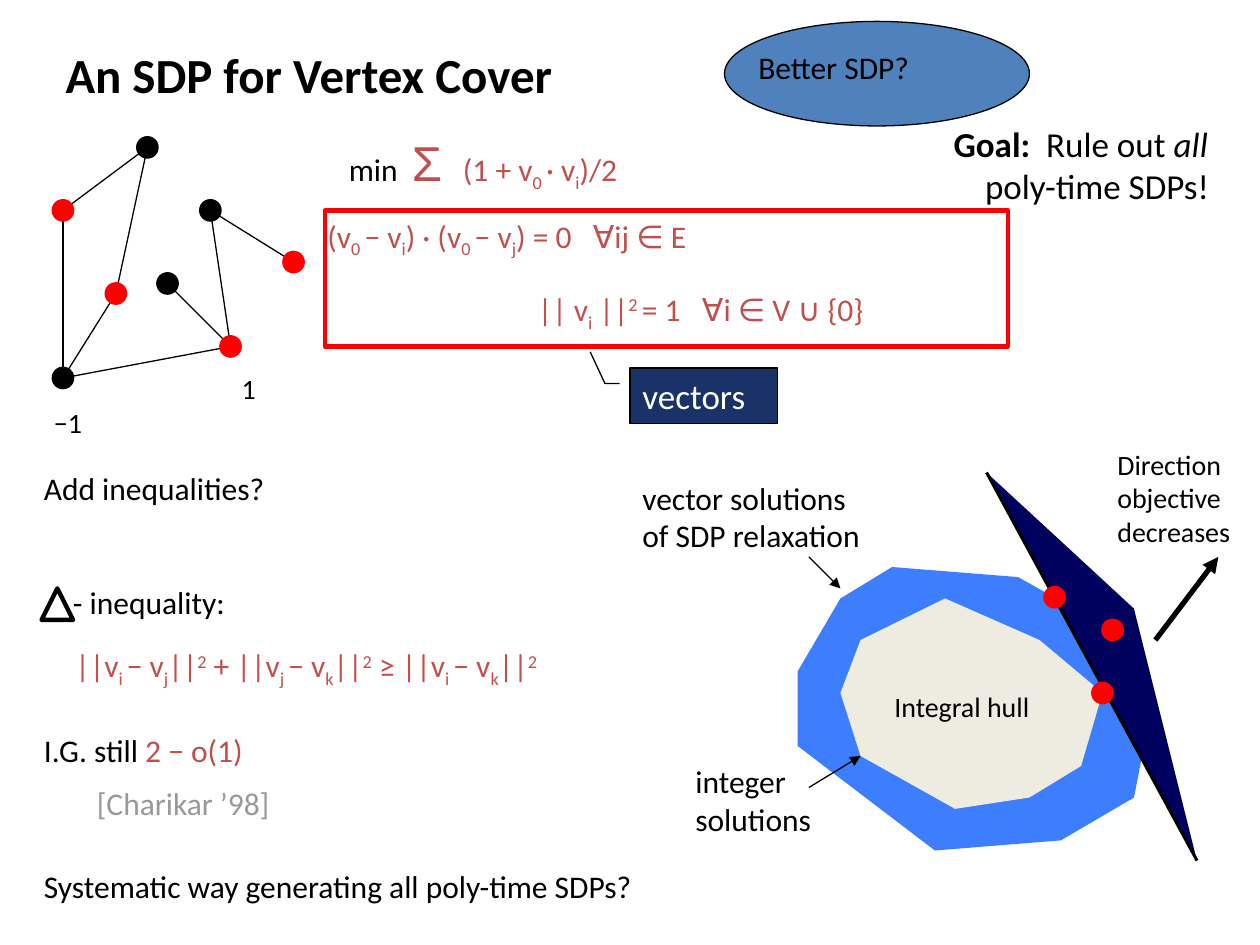
from dataclasses import dataclass, field
from typing import NamedTuple

from lxml.etree import SubElement
from pptx import Presentation
from pptx.dml.color import RGBColor
from pptx.enum.shapes import MSO_CONNECTOR, MSO_SHAPE
from pptx.enum.text import MSO_ANCHOR, PP_ALIGN
from pptx.oxml.ns import qn
from pptx.util import Inches, Pt

COLORS = {
    "black": "000000", "white": "FFFFFF", "red": "FF0000", "formula": "C0504D",
    "grey": "999999", "bubble": "4F81BD", "relaxation": "3D7EFF",
    "half_plane": "00005E", "hull": "EEECE1", "callout": "193369",
}
DOT_SIZE = 0.17


class Piece(NamedTuple):
    text: str
    formats: dict = {}
    color: str = ""
    baseline: int = 0


class Point(NamedTuple):
    x: float
    y: float


class Vertex(NamedTuple):
    center: Point
    color: str


class Arrow(NamedTuple):
    start: Point
    end: Point
    width: float


class Polygon(NamedTuple):
    color: str
    points: list


@dataclass
class Label:
    left: float
    top: float
    width: float
    height: float
    lines: list
    size: int = 18
    color: str = "black"
    indents: dict = field(default_factory=dict)


def sub(text: str) -> Piece:
    return Piece(text, baseline=-25000)


def sup(text: str) -> Piece:
    return Piece(text, baseline=30000)


def rgb(name: str) -> RGBColor:
    return RGBColor.from_string(COLORS[name])


def fill_text(frame, lines: list, size: int, color: str) -> None:
    for index, line in enumerate(lines):
        paragraph = frame.paragraphs[0] if index == 0 else frame.add_paragraph()
        paragraph.alignment = PP_ALIGN.LEFT
        for item in [line] if isinstance(line, str) else line:
            piece = Piece(item) if isinstance(item, str) else item
            run = paragraph.add_run()
            run.text = piece.text
            formats = {"name": "Calibri", "size": Pt(size), **piece.formats}
            for name, value in formats.items():
                setattr(run.font, name, value)
            run.font.color.rgb = rgb(piece.color or color)
            if piece.baseline:
                run.font._element.set("baseline", str(piece.baseline))


def add_label(shapes, label: Label) -> None:
    box = [Inches(v) for v in (label.left, label.top, label.width, label.height)]
    frame = shapes.add_textbox(*box).text_frame
    frame.word_wrap = True
    fill_text(frame, label.lines, label.size, label.color)
    for index, indent in label.indents.items():
        properties = frame.paragraphs[index]._p.get_or_add_pPr()
        properties.set("marL", str(Inches(indent)))


def add_preset(shapes, kind, box: tuple, fill: str = "", line: str = "black",
               width: float = 0.75):
    shape = shapes.add_shape(kind, *[Inches(value) for value in box])
    shape.shadow.inherit = False
    if fill:
        shape.fill.solid()
        shape.fill.fore_color.rgb = rgb(fill)
    else:
        shape.fill.background()
    shape.line.color.rgb = rgb(line)
    shape.line.width = Pt(width)
    return shape


def add_dot(shapes, center: Point, color: str) -> None:
    box = (center.x - DOT_SIZE / 2, center.y - DOT_SIZE / 2, DOT_SIZE, DOT_SIZE)
    add_preset(shapes, MSO_SHAPE.OVAL, box, color, color)


def add_line(shapes, start: Point, end: Point, width: float = 0.75,
             arrow: bool = False) -> None:
    ends = [Inches(value) for value in (*start, *end)]
    connector = shapes.add_connector(MSO_CONNECTOR.STRAIGHT, *ends)
    connector.line.color.rgb = rgb("black")
    connector.line.width = Pt(width)
    if arrow:
        SubElement(connector.line._get_or_add_ln(), qn("a:tailEnd"), type="triangle")
    SubElement(connector._element.spPr, qn("a:effectLst"))


def add_polygon(shapes, polygon: Polygon) -> None:
    points = [(Inches(x), Inches(y)) for x, y in polygon.points]
    builder = shapes.build_freeform(*points[0])
    builder.add_line_segments(points[1:], close=True)
    shape = builder.convert_to_shape()
    shape.shadow.inherit = False
    shape.fill.solid()
    shape.fill.fore_color.rgb = rgb(polygon.color)
    shape.line.fill.background()


POLYGONS = [
    Polygon("relaxation", [(6.67, 4.75), (6.33, 5.33), (6.33, 5.92), (7.42, 6.75),
                           (8.42, 6.67), (9, 6.33), (9.08, 5.92), (8.83, 5),
                           (8.08, 4.58), (7.08, 4.5)]),
    Polygon("half_plane", [(7.83, 3.75), (9.5, 6.83), (9, 4.83)]),
    Polygon("hull", [(7.5, 4.75), (6.83, 5.08), (6.67, 5.5), (6.83, 6), (7.58, 6.42),
                     (8.17, 6.33), (8.58, 6.08), (8.75, 5.5), (8.25, 5.08)]),
]
VERTICES = {
    "top": Vertex(Point(1.17, 1.17), "black"),
    "left": Vertex(Point(0.5, 1.67), "red"),
    "middle": Vertex(Point(0.92, 2.33), "red"),
    "bottom": Vertex(Point(0.5, 3), "black"),
    "inner": Vertex(Point(1.33, 2.25), "black"),
    "upper": Vertex(Point(1.67, 1.67), "black"),
    "hub": Vertex(Point(1.83, 2.75), "red"),
    "right": Vertex(Point(2.33, 2.08), "red"),
}
EDGES = [("left", "bottom"), ("bottom", "hub"), ("hub", "upper"), ("bottom", "middle"),
         ("middle", "top"), ("top", "left"), ("right", "upper"), ("hub", "inner")]
ARROWS = [
    Arrow(Point(6.42, 4.42), Point(6.67, 4.67), 0.75),
    Arrow(Point(6.42, 6.25), Point(6.83, 6), 0.75),
    Arrow(Point(9.17, 5.08), Point(9.67, 4.42), 3),
]
SOLUTION_DOTS = [Point(8.83, 5), Point(8.75, 5.5), Point(8.37, 4.74)]
LABELS = [
    Label(4.17, 2.25, 3.83, 0.5, [["|| v", sub("i"), " ||", sup("2 "),
                                   "= 1   ∀i ∈ V ∪ {0}"]], color="formula"),
    Label(2.5, 1.67, 4.58, 0.5, [["(v", sub("0 "), "− v", sub("i"), ") · (v", sub("0 "),
                                  "− v", sub("j"), ") = 0   ∀ij ∈ E"]], color="formula"),
    Label(2.67, 1, 3.13, 0.57, [[
        Piece("min  ", color="black"), Piece("Σ ", {"name": "Arial", "size": Pt(28)}),
        " (1 + v", sub("0 "), "· v", sub("i"), ")/2"]], color="formula"),
    Label(0.5, 5.08, 5.17, 0.5, [[
        "||v", sub("i "), "− v", sub("j"), "||", sup("2"), " + ||v", sub("j "), "− v",
        sub("k"), "||", sup("2"), " ≥ ||v", sub("i "), "− v", sub("k"), "||", sup("2")]],
        color="formula"),
    Label(1.82, 2.9, 0.32, 0.37, ["1"], 16),
    Label(0.33, 3.17, 0.45, 0.37, ["−1"], 16),
    Label(5.92, 0.33, 2.05, 0.5, ["Better SDP?"]),
    Label(0.25, 4.58, 2.28, 0.5, ["- inequality:"], indents={0: 0.23}),
    Label(7, 5.42, 1.35, 0.37, ["Integral hull"], 16),
    Label(0.25, 5.75, 2.58, 0.5, [["I.G. still ", Piece("2 − o(1)", color="formula")]]),
    Label(0.67, 6.17, 1.69, 0.4, ["[Charikar ’98]"], color="grey"),
    Label(0.25, 6.83, 7.19, 0.5, ["Systematic way generating all poly-time SDPs?"]),
    Label(5.42, 6, 1.19, 0.7, ["integer", "solutions"]),
    Label(5, 3.75, 2.15, 0.7, ["vector solutions", "of SDP relaxation"]),
    Label(8.77, 3.5, 1.23, 0.9, ["Direction", "objective", "decreases"], 16),
    Label(0.25, 3.67, 2.74, 0.5, ["Add inequalities?"]),
    Label(7.47, 0.92, 2.53, 0.77, [
        [Piece("Goal:", {"bold": True}), "  Rule out ", Piece("all", {"italic": True})],
        "poly-time SDPs!"], 20, indents={1: 0.25}),
]


def main() -> None:
    presentation = Presentation()
    presentation.slide_width, presentation.slide_height = Inches(10), Inches(7.5)
    slide = presentation.slides.add_slide(presentation.slide_layouts[5])
    shapes = slide.shapes

    title = shapes.title
    for name, value in {"left": 0.42, "top": 0.17, "width": 9.33, "height": 0.83}.items():
        setattr(title, name, Inches(value))
    title.text_frame.vertical_anchor = MSO_ANCHOR.MIDDLE
    fill_text(title.text_frame, [[Piece("An SDP for Vertex Cover", {"bold": True})]],
              28, "black")

    for polygon in POLYGONS:
        add_polygon(shapes, polygon)
    add_preset(shapes, MSO_SHAPE.OVAL, (5.75, 0.17, 2.42, 0.83), "bubble")

    graph = shapes.add_group_shape().shapes
    for start, end in EDGES:
        add_line(graph, VERTICES[start].center, VERTICES[end].center)
    for vertex in VERTICES.values():
        add_dot(graph, vertex.center, vertex.color)

    add_preset(shapes, MSO_SHAPE.ISOSCELES_TRIANGLE, (0.33, 4.67, 0.25, 0.25), width=2.5)
    add_line(shapes, Point(9.5, 6.83), Point(7.83, 3.75), 1.75)
    callout = add_preset(shapes, MSO_SHAPE.LINE_CALLOUT_2, (5, 2.92, 1.17, 0.44), "callout")
    for index, value in enumerate((0.28, -0.07, 0.28, -0.17, -0.29, -0.27)):
        callout.adjustments[index] = value
    fill_text(callout.text_frame, ["vectors"], 20, "white")

    for label in LABELS:
        add_label(shapes, label)
    for arrow in ARROWS:
        add_line(shapes, *arrow, arrow=True)
    for center in SOLUTION_DOTS:
        add_dot(shapes, center, "red")
    add_preset(shapes, MSO_SHAPE.RECTANGLE, (2.58, 1.67, 5.42, 1.08), line="red", width=2.5)
    presentation.save("out.pptx")


if __name__ == "__main__":
    main()
